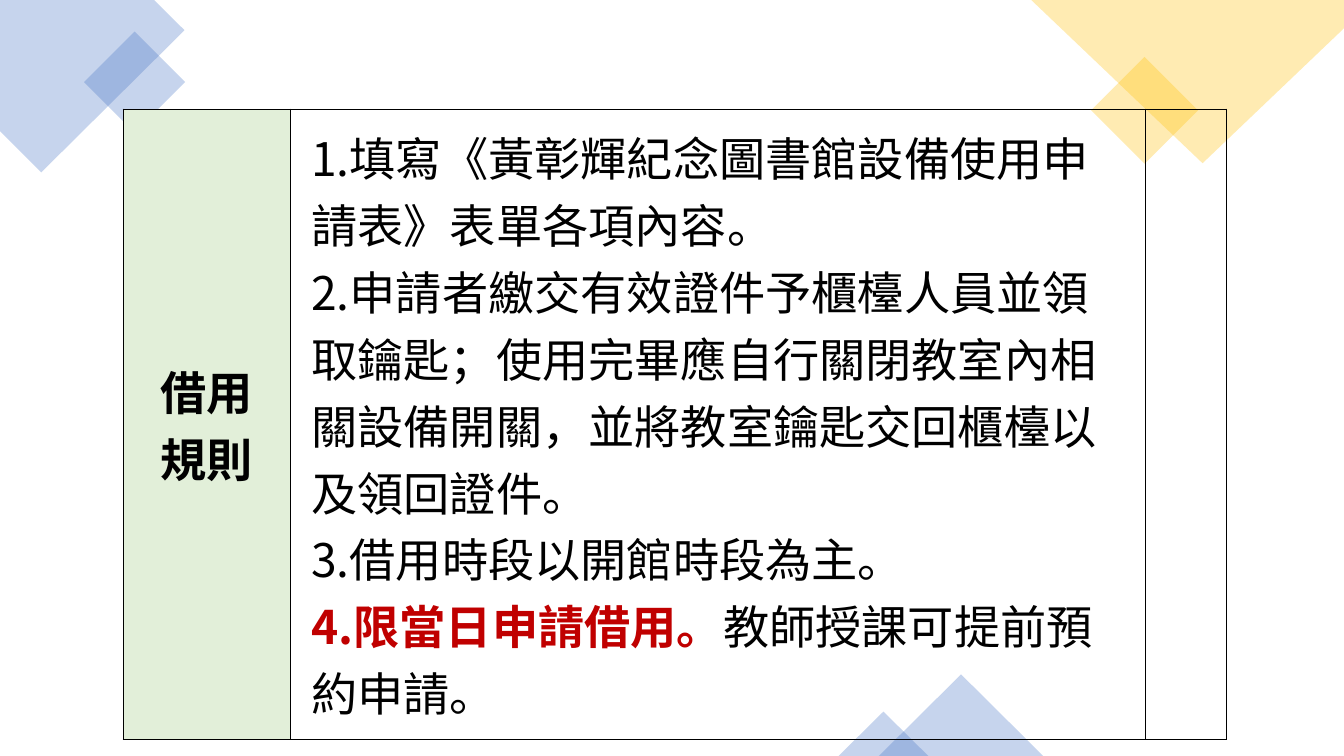
from lxml.etree import SubElement
from pptx import Presentation
from pptx.dml.color import RGBColor
from pptx.enum.shapes import MSO_SHAPE
from pptx.enum.text import MSO_ANCHOR, PP_ALIGN
from pptx.oxml.ns import qn
from pptx.util import Pt

FONT = "Noto Sans CJK TC"
TEXT_SIZE = 33
BLUE, YELLOW, GREEN = "4472C4", "FFC000", "E2EFD9"
BLACK, RED = "000000", "C00000"

HEADING = "借用規則"
# Each rule is a list of (text, colour, bold)
RULES = [
    [("填寫《黃彰輝紀念圖書館設備使用申請表》表單各項內容。", BLACK, False)],
    [("申請者繳交有效證件予櫃檯人員並領取鑰匙；使用完畢應自行關閉教室內相關設備開關，"
      "並將教室鑰匙交回櫃檯以及領回證件。", BLACK, False)],
    [("借用時段以開館時段為主。", BLACK, False)],
    [("限當日申請借用。", RED, True), ("教師授課可提前預約申請。", BLACK, False)],
]

# Corner decorations, in points
BLUE_CORNER = [(0, 0), (110.2, 0), (131.8, 21.6), (29.5, 123.1), (0, 93.6)]
YELLOW_CORNER = [(736.6, 0), (960, 0), (960, 20.2), (859, 116.6)]
BLUE_DIAMOND = (70.6, 33.1, 51.1, 51.1)
YELLOW_DIAMOND = (790.6, 51.8, 54, 54)
TRIANGLES = [(627.8, 481.7, 117.4, 58.3), (599, 508.3, 64.1, 31.7)]

TABLE_LEFT, TABLE_TOP, ROW_HEIGHT = 87.8, 77.8, 384
COLUMN_WIDTHS = [119.5, 610.6, 58.3]
MARGIN_X, MARGIN_Y = 15.1, 10.1


def colour(value):
    return RGBColor.from_string(value)


def style_decoration(shape, fill):
    """Give a shape a 30 % opaque fill without line or shadow."""
    shape.shadow.inherit = False
    shape.line.fill.background()
    shape.fill.solid()
    shape.fill.fore_color.rgb = colour(fill)
    colour_element = shape.fill._xPr.find(".//" + qn("a:srgbClr"))
    SubElement(colour_element, qn("a:alpha"), val="30000")


def add_preset(slide, preset, box, fill, rotation=0):
    shape = slide.shapes.add_shape(preset, *map(Pt, box))
    shape.rotation = rotation
    style_decoration(shape, fill)


def add_polygon(slide, points, fill):
    corners = [(Pt(x), Pt(y)) for x, y in points]
    builder = slide.shapes.build_freeform(*corners[0])
    builder.add_line_segments(corners[1:], close=True)
    style_decoration(builder.convert_to_shape(), fill)


def add_run(paragraph, text, text_colour, bold):
    run = paragraph.add_run()
    run.text = text
    run.font.size = Pt(TEXT_SIZE)
    run.font.name = FONT
    run.font.bold = bold
    run.font.color.rgb = colour(text_colour)
    SubElement(run.font._element, qn("a:ea"), typeface=FONT)


def number_paragraph(paragraph):
    properties = paragraph._p.get_or_add_pPr()
    properties.set("marL", "0")
    properties.set("indent", "0")
    SubElement(properties, qn("a:buFont"), typeface=FONT)
    SubElement(properties, qn("a:buAutoNum"), type="arabicPeriod")


def format_cell(cell, fill=None):
    """Set margins, anchor, thin black borders and the fill."""
    cell.margin_left = cell.margin_right = Pt(MARGIN_X)
    cell.margin_top = cell.margin_bottom = Pt(MARGIN_Y)
    cell.vertical_anchor = MSO_ANCHOR.MIDDLE
    properties = cell._tc.get_or_add_tcPr()
    for side in ("lnL", "lnR", "lnT", "lnB"):
        border = SubElement(properties, qn("a:" + side), w=str(Pt(0.5)))
        solid = SubElement(border, qn("a:solidFill"))
        SubElement(solid, qn("a:srgbClr"), val=BLACK)
    if fill:
        cell.fill.solid()
        cell.fill.fore_color.rgb = colour(fill)
    else:
        cell.fill.background()


def add_rules_table(slide):
    frame = slide.shapes.add_table(1, len(COLUMN_WIDTHS), Pt(TABLE_LEFT), Pt(TABLE_TOP),
                                   Pt(sum(COLUMN_WIDTHS)), Pt(ROW_HEIGHT))
    table = frame.table
    table.first_row = table.horz_banding = False
    for column, width in zip(table.columns, COLUMN_WIDTHS):
        column.width = Pt(width)
    heading_cell, rules_cell, empty_cell = table.rows[0].cells
    format_cell(heading_cell, GREEN)
    format_cell(rules_cell)
    format_cell(empty_cell)

    heading = heading_cell.text_frame.paragraphs[0]
    heading.alignment = PP_ALIGN.CENTER
    add_run(heading, HEADING, BLACK, True)

    text_frame = rules_cell.text_frame
    for index, rule in enumerate(RULES):
        paragraph = text_frame.add_paragraph() if index else text_frame.paragraphs[0]
        number_paragraph(paragraph)
        for text, text_colour, bold in rule:
            add_run(paragraph, text, text_colour, bold)


def main():
    presentation = Presentation()
    presentation.slide_width, presentation.slide_height = Pt(960), Pt(540)
    slide = presentation.slides.add_slide(presentation.slide_layouts[6])
    add_polygon(slide, BLUE_CORNER, BLUE)
    add_preset(slide, MSO_SHAPE.RECTANGLE, BLUE_DIAMOND, BLUE, 315)
    add_preset(slide, MSO_SHAPE.RECTANGLE, YELLOW_DIAMOND, YELLOW, 315)
    add_polygon(slide, YELLOW_CORNER, YELLOW)
    for box in TRIANGLES:
        add_preset(slide, MSO_SHAPE.ISOSCELES_TRIANGLE, box, BLUE)
    add_rules_table(slide)
    presentation.save("out.pptx")


if __name__ == "__main__":
    main()
